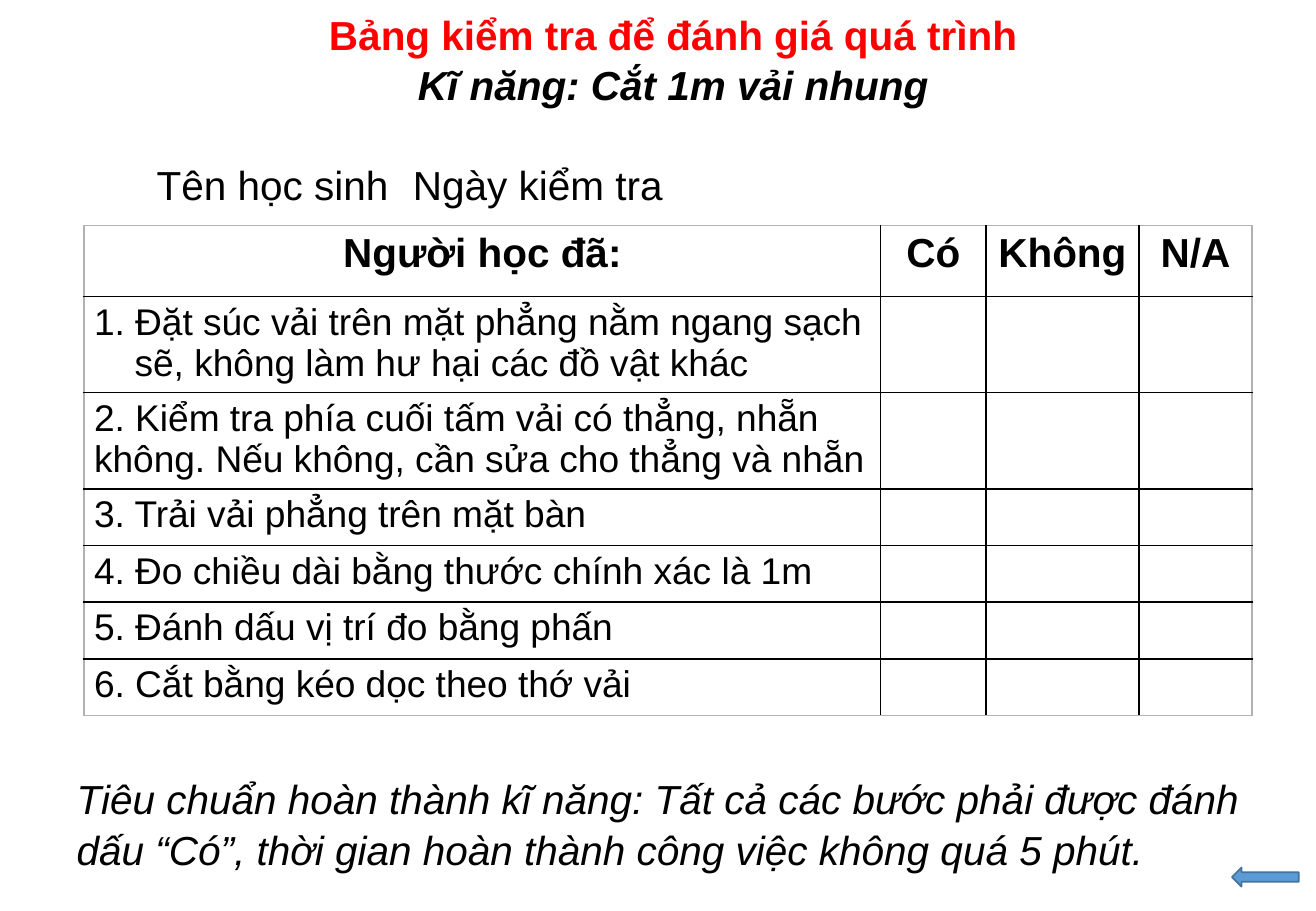
"""Build the checklist slide for assessing the skill of cutting velvet."""
from lxml.etree import SubElement
from pptx import Presentation
from pptx.dml.color import RGBColor as RGB
from pptx.enum.shapes import MSO_SHAPE as SHAPE
from pptx.enum.text import PP_ALIGN as AL
from pptx.oxml.ns import qn
from pptx.util import Emu, Pt

PX = 7620
THEME = {
    "font": "Arial", "ink": "000000", "title": "FF0000", "frame": "B2B2B2",
    "arrow": "5B9BD5", "arrow_line": "43739E", "large": 24, "body": 22,
}
STEPS = [
    "1. Đặt súc vải trên mặt phẳng nằm ngang sạch sẽ, không làm hư hại các đồ vật khác",
    "2. Kiểm tra phía cuối tấm vải có thẳng, nhẵn không. Nếu không, cần sửa cho thẳng và nhẵn",
    "3. Trải vải phẳng trên mặt bàn",
    "4. Đo chiều dài bằng thước chính xác là 1m",
    "5. Đánh dấu vị trí đo bằng phấn",
    "6. Cắt bằng kéo dọc theo thớ vải",
]
ROWS = [["Người học đã:", "Có", "Không", "N/A"]] + [[step, "", "", ""] for step in STEPS]
COLS = [787, 104, 151, 112]
HEIGHTS = [70, 95, 95, 56, 56, 56, 56]


def write(p, text, color="ink", size="large", align=AL.LEFT, **style):
    p.alignment = align
    r = p.add_run()
    r.text = text
    font = {"name": THEME["font"], "size": Pt(THEME[size]), "bold": False, "italic": False}
    for name, value in (font | style).items():
        setattr(r.font, name, value)
    r.font.color.rgb = RGB.from_string(THEME[color])


def text_box(s, *box):
    tf = s.shapes.add_textbox(*[Emu(n * PX) for n in box]).text_frame
    tf.word_wrap = True
    return tf


prs = Presentation()
prs.slide_width, prs.slide_height = Emu(1300 * PX), Emu(900 * PX)
s = prs.slides.add_slide(prs.slide_layouts[6])

frame = s.shapes.add_table(len(ROWS), len(COLS), *[
    Emu(n * PX) for n in (83, 223, sum(COLS), sum(HEIGHTS))])
table = frame.table
table.first_row = table.horz_banding = False
for col, width in zip(table.columns, COLS):
    col.width = Emu(width * PX)
for row, height in zip(table.rows, HEIGHTS):
    row.height = Emu(height * PX)

for i, texts in enumerate(ROWS):
    for j, text in enumerate(texts):
        cell = table.cell(i, j)
        margins = {"margin_left": 10, "margin_right": 10, "margin_top": 5, "margin_bottom": 5}
        for name, value in margins.items():
            setattr(cell, name, Emu(value * PX))
        outer = {"lnL": j == 0, "lnR": j == len(COLS) - 1, "lnT": i == 0, "lnB": i == len(ROWS) - 1}
        for side, is_outer in outer.items():
            ln = SubElement(cell._tc.get_or_add_tcPr(), qn(f"a:{side}"), w=str(Pt(1)))
            fill = SubElement(ln, qn("a:solidFill"))
            SubElement(fill, qn("a:srgbClr"), val=THEME["frame" if is_outer else "ink"])
        cell.fill.background()
        p = cell.text_frame.paragraphs[0]
        if i == 0:
            write(p, text, align=AL.CENTER, bold=True)
        elif text:
            write(p, text, size="body")

hanging = table.cell(1, 0).text_frame.paragraphs[0]._p.get_or_add_pPr()
hanging.set("marL", str(40 * PX))
hanging.set("indent", str(-40 * PX))

tf = text_box(s, 96, 2, 1091, 206)
HEADING = [
    ("Bảng kiểm tra để đánh giá quá trình", {"color": "title", "align": AL.CENTER, "bold": True}),
    ("Kĩ năng: Cắt 1m vải nhung", {"align": AL.CENTER, "bold": True, "italic": True}),
    ("Tên học sinh\tNgày kiểm tra", {}),
]
for i, (text, style) in enumerate(HEADING):
    p = tf.add_paragraph() if i else tf.paragraphs[0]
    pPr = p._p.get_or_add_pPr()
    pPr.set("marL", "0")
    pPr.set("indent", str(47 * PX))
    if "\t" in text:
        tabs = SubElement(pPr, qn("a:tabLst"))
        SubElement(tabs, qn("a:tab"), pos=str(810 * PX), algn="l")
        p.space_before = Pt(29)
    p.line_spacing = 1.04
    write(p, text, **style)

p = text_box(s, 64, 757, 1181, 109).paragraphs[0]
p.line_spacing = 1.04
write(p, "Tiêu chuẩn hoàn thành kĩ năng: Tất cả các bước phải được đánh dấu “Có”, "
      "thời gian hoàn thành công việc không quá 5 phút.", italic=True)

sp = s.shapes.add_shape(SHAPE.LEFT_ARROW, *[Emu(n * PX) for n in (1217, 857, 66, 19)])
sp.shadow.inherit = False
sp.fill.solid()
sp.fill.fore_color.rgb = RGB.from_string(THEME["arrow"])
sp.line.color.rgb = RGB.from_string(THEME["arrow_line"])
sp.line.width = Pt(1)

prs.save("out.pptx")
